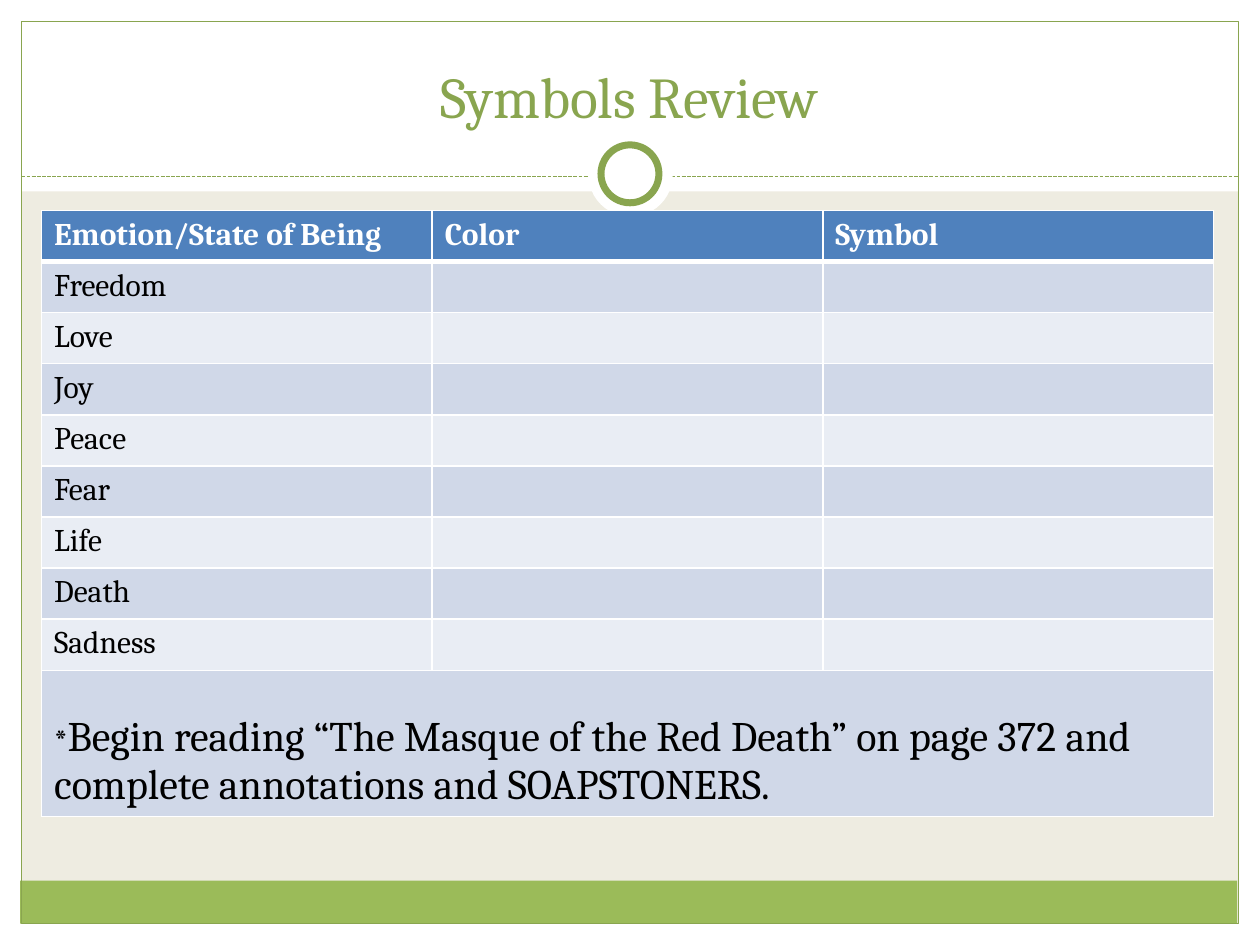
from typing import NamedTuple, Optional

from lxml.etree import SubElement
from pptx import Presentation
from pptx.dml.color import RGBColor
from pptx.enum.dml import MSO_LINE
from pptx.enum.shapes import MSO_CONNECTOR, MSO_SHAPE
from pptx.enum.text import MSO_ANCHOR, PP_ALIGN
from pptx.oxml.ns import qn
from pptx.util import Inches, Pt

WHITE = RGBColor(0xFF, 0xFF, 0xFF)
BLACK = RGBColor(0x00, 0x00, 0x00)
BEIGE = RGBColor(0xEE, 0xEC, 0xE1)
GREEN = RGBColor(0x9B, 0xBB, 0x59)
DARK_GREEN = RGBColor(0x89, 0xA5, 0x4F)
HEADER_BLUE = RGBColor(0x4F, 0x81, 0xBD)
BANDS = (RGBColor(0xD0, 0xD8, 0xE8), RGBColor(0xE9, 0xED, 0xF4))
FONT = "Cambria"

HEADERS = ("Emotion/State of Being", "Color", "Symbol")
EMOTIONS = ("Freedom", "Love", "Joy", "Peace", "Fear", "Life", "Death", "Sadness")
ASSIGNMENT = (
    "Begin reading “The Masque of the Red Death” on page 372 "
    "and complete annotations and SOAPSTONERS."
)
GRID_HEIGHT = 3.65
ASSIGNMENT_HEIGHT = 1.16


class Decoration(NamedTuple):
    left: float
    top: float
    width: float
    height: float
    fill: Optional[RGBColor]
    line_width: float = 0
    kind: MSO_SHAPE = MSO_SHAPE.RECTANGLE


DECORATIONS = (
    Decoration(0, 7.33, 10, 0.17, WHITE),
    Decoration(0, 0, 10, 1.52, WHITE),
    Decoration(0, 0, 0.17, 7.5, WHITE),
    Decoration(9.83, 0, 0.17, 7.5, WHITE),
    Decoration(0.16, 6.99, 9.66, 0.34, GREEN),
    Decoration(0.17, 0.17, 9.66, 7.16, None, 0.75),
)
RINGS = (
    Decoration(4.67, 1.05, 0.67, 0.67, WHITE, kind=MSO_SHAPE.OVAL),
    Decoration(4.77, 1.15, 0.46, 0.46, WHITE, 4, MSO_SHAPE.OVAL),
)


def add_decoration(slide, item: Decoration) -> None:
    shape = slide.shapes.add_shape(
        item.kind, Inches(item.left), Inches(item.top),
        Inches(item.width), Inches(item.height),
    )
    shape.shadow.inherit = False
    if item.fill is None:
        shape.fill.background()
    else:
        shape.fill.solid()
        shape.fill.fore_color.rgb = item.fill
    if item.line_width:
        shape.line.color.rgb = DARK_GREEN
        shape.line.width = Pt(item.line_width)
    else:
        shape.line.fill.background()


def add_divider(slide) -> None:
    divider = slide.shapes.add_connector(
        MSO_CONNECTOR.STRAIGHT, Inches(0.17), Inches(1.4), Inches(9.83), Inches(1.4)
    )
    divider.line.color.rgb = DARK_GREEN
    divider.line.width = Pt(0.75)
    divider.line.dash_style = MSO_LINE.SQUARE_DOT
    SubElement(divider._element.spPr, qn("a:effectLst"))


def add_run(paragraph, text: str, size: float, color: RGBColor, bold: bool = False) -> None:
    run = paragraph.add_run()
    run.text = text
    run.font.name = FONT
    run.font.size = Pt(size)
    run.font.color.rgb = color
    run.font.bold = bold


def add_title(slide) -> None:
    box = slide.shapes.add_textbox(Inches(0.33), Inches(0.25), Inches(9.33), Inches(0.83))
    box.text_frame.word_wrap = True
    box.text_frame.vertical_anchor = MSO_ANCHOR.BOTTOM
    paragraph = box.text_frame.paragraphs[0]
    paragraph.alignment = PP_ALIGN.CENTER
    add_run(paragraph, "Symbols Review", 33, DARK_GREEN)


def style_cell(cell, fill: RGBColor, top: float, bottom: float) -> None:
    """Give a cell white borders, with widths in points, and a solid fill."""
    properties = cell._tc.get_or_add_tcPr()
    for side, width in (("L", 1), ("R", 1), ("T", top), ("B", bottom)):
        border = SubElement(properties, qn(f"a:ln{side}"), w=str(Pt(width)))
        solid = SubElement(border, qn("a:solidFill"))
        SubElement(solid, qn("a:srgbClr"), val=str(WHITE))
    cell.fill.solid()
    cell.fill.fore_color.rgb = fill


def add_symbols_table(slide) -> None:
    grid_rows = len(EMOTIONS) + 1
    table = slide.shapes.add_table(
        grid_rows + 1, len(HEADERS), Inches(0.33), Inches(1.67),
        Inches(9.3), Inches(GRID_HEIGHT + ASSIGNMENT_HEIGHT),
    ).table
    table.horz_banding = False
    for column in table.columns:
        column.width = Inches(3.1)

    for index, row in enumerate(table.rows):
        row.height = Inches(GRID_HEIGHT / grid_rows if index < grid_rows else ASSIGNMENT_HEIGHT)
        fill = BANDS[(index - 1) % 2] if index else HEADER_BLUE
        for cell in row.cells:
            style_cell(cell, fill, 3 if index == 1 else 1, 1 if index else 3)

    for column, header in enumerate(HEADERS):
        add_run(table.cell(0, column).text_frame.paragraphs[0], header, 18, WHITE, True)
    for row, emotion in enumerate(EMOTIONS, start=1):
        add_run(table.cell(row, 0).text_frame.paragraphs[0], emotion, 18, BLACK)

    assignment = table.cell(grid_rows, 0)
    assignment.merge(table.cell(grid_rows, len(HEADERS) - 1))
    assignment.vertical_anchor = MSO_ANCHOR.BOTTOM
    paragraph = assignment.text_frame.paragraphs[0]
    add_run(paragraph, "*", 18, BLACK)
    add_run(paragraph, ASSIGNMENT, 24, BLACK)


def main() -> None:
    presentation = Presentation()
    presentation.slide_width = Inches(10)
    presentation.slide_height = Inches(7.5)
    slide = presentation.slides.add_slide(presentation.slide_layouts[6])
    slide.background.fill.solid()
    slide.background.fill.fore_color.rgb = BEIGE
    for decoration in DECORATIONS:
        add_decoration(slide, decoration)
    add_divider(slide)
    for ring in RINGS:
        add_decoration(slide, ring)
    add_title(slide)
    add_symbols_table(slide)
    presentation.save("out.pptx")


if __name__ == "__main__":
    main()
